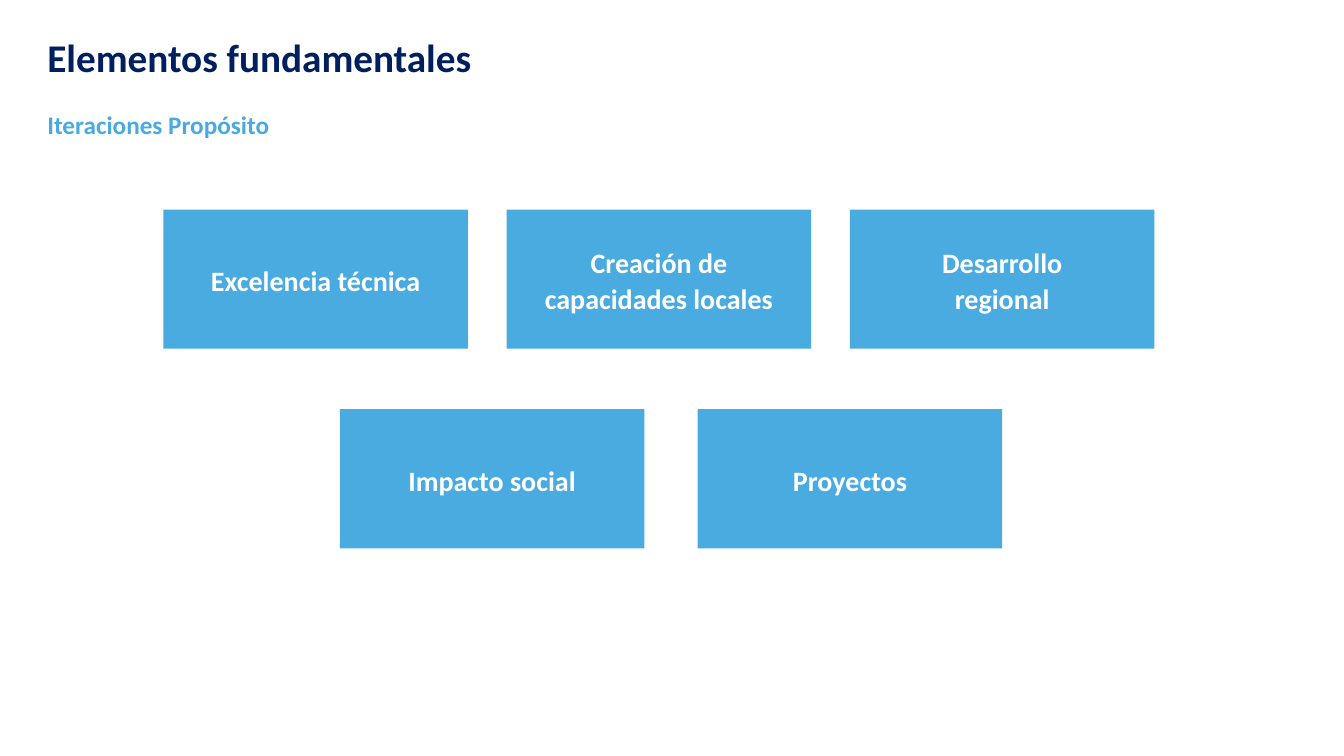
from pptx import Presentation
from pptx.dml.color import RGBColor
from pptx.enum.shapes import MSO_SHAPE
from pptx.enum.text import MSO_ANCHOR, MSO_AUTO_SIZE, PP_ALIGN
from pptx.util import Inches, Pt

NAVY = RGBColor(0x00, 0x1F, 0x5F)
SKY = RGBColor(0x4A, 0xAB, 0xE0)
SUBTITLE_BLUE = RGBColor(0x4A, 0xAA, 0xDF)
WHITE = RGBColor(0xFF, 0xFF, 0xFF)

MARGIN = 0.47
BOX_WIDTH, BOX_HEIGHT = 3.02, 1.38
TOP_ROW, ROW_STEP = 2.08, 1.98
SIDE_INSET = 0.3

# Each row: left edge, gap between boxes, (label, side inset) pairs
ROWS = [
    (1.62, 0.385, [("Excelencia técnica", SIDE_INSET),
                   ("Creación de capacidades locales", SIDE_INSET),
                   ("Desarrollo regional", 0.6)]),
    (3.37, 0.53, [("Impacto social", SIDE_INSET), ("Proyectos", SIDE_INSET)]),
]


def write_text(shape, text, size, color, align, anchor, inset=0):
    frame = shape.text_frame
    frame.text = text
    frame.word_wrap = True
    frame.auto_size = MSO_AUTO_SIZE.NONE
    frame.vertical_anchor = anchor
    frame.margin_left = frame.margin_right = Inches(inset)
    frame.margin_top = frame.margin_bottom = 0
    paragraph = frame.paragraphs[0]
    paragraph.alignment = align
    paragraph.font.name = "Calibri"
    paragraph.font.size = Pt(size)
    paragraph.font.bold = True
    paragraph.font.color.rgb = color
    return paragraph


def add_headings(slide):
    title = slide.shapes.title
    title.left, title.top = Inches(MARGIN), Inches(0.32)
    title.width, title.height = Inches(4.5), Inches(0.49)
    paragraph = write_text(title, "Elementos fundamentales", 28, NAVY,
                           PP_ALIGN.LEFT, MSO_ANCHOR.MIDDLE)
    paragraph.line_spacing = 1.0
    subtitle = slide.shapes.add_textbox(
        Inches(MARGIN), Inches(1.07), Inches(2.5), Inches(0.33))
    write_text(subtitle, "Iteraciones Propósito", 18, SUBTITLE_BLUE,
               PP_ALIGN.LEFT, MSO_ANCHOR.MIDDLE)


def add_box(slide, left, top, label, inset):
    box = slide.shapes.add_shape(
        MSO_SHAPE.RECTANGLE, Inches(left), Inches(top),
        Inches(BOX_WIDTH), Inches(BOX_HEIGHT))
    box.shadow.inherit = False
    box.fill.solid()
    box.fill.fore_color.rgb = SKY
    box.line.fill.background()
    paragraph = write_text(box, label, 20, WHITE, PP_ALIGN.CENTER,
                           MSO_ANCHOR.MIDDLE, inset)
    paragraph.line_spacing = 1.07


def main():
    presentation = Presentation()
    presentation.slide_width = Inches(13.33)
    presentation.slide_height = Inches(7.5)
    slide = presentation.slides.add_slide(presentation.slide_layouts[5])

    # Title and subtitle
    add_headings(slide)

    # Rows of purpose boxes
    for row, (start, gap, boxes) in enumerate(ROWS):
        for column, (label, inset) in enumerate(boxes):
            add_box(slide, start + column * (BOX_WIDTH + gap),
                    TOP_ROW + row * ROW_STEP, label, inset)

    presentation.save("out.pptx")


if __name__ == "__main__":
    main()
